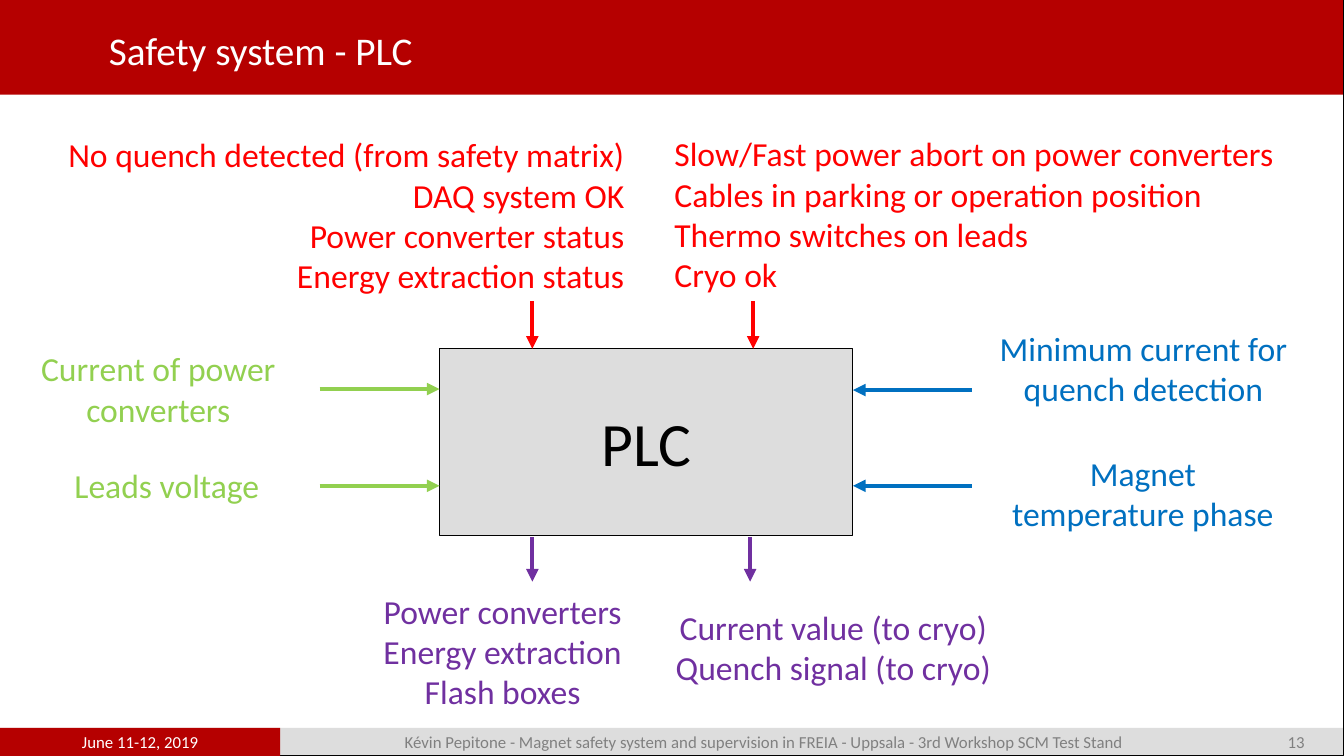
"""Build the PLC safety system slide."""
from lxml import etree
from pptx import Presentation
from pptx.dml.color import RGBColor
from pptx.enum.shapes import MSO_CONNECTOR, MSO_SHAPE
from pptx.enum.text import MSO_ANCHOR, MSO_AUTO_SIZE, PP_ALIGN
from pptx.oxml.ns import qn
from pptx.util import Pt

LEFT, CENTER, RIGHT = PP_ALIGN.LEFT, PP_ALIGN.CENTER, PP_ALIGN.RIGHT
TOP, MIDDLE, BOTTOM = MSO_ANCHOR.TOP, MSO_ANCHOR.MIDDLE, MSO_ANCHOR.BOTTOM
RECT, STRAIGHT = MSO_SHAPE.RECTANGLE, MSO_CONNECTOR.STRAIGHT
PX = 9144
W, H = 1333, 750
FONT = "Calibri"
COLORS = {
    "brand": "B50000", "panel": "DDDDDD", "black": "000000",
    "white": "FFFFFF", "grey": "808080", "red": "FF0000",
    "green": "92D050", "blue": "0070C0", "purple": "7030A0",
}

TITLE = "Safety system - PLC"
HEADER_H, FOOTER_H, DATE_W, NUMBER_W = 94, 28, 278, 95
FOOTER_Y = H - FOOTER_H
FOOTER = [
    ("June 11-12, 2019", 0, DATE_W, "white"),
    ("Kévin Pepitone - Magnet safety system and supervision in FREIA - "
     "Uppsala - 3rd Workshop SCM Test Stand",
     DATE_W, W - DATE_W - NUMBER_W, "grey"),
    ("13", W - NUMBER_W, NUMBER_W, "grey"),
]
BARS = [
    ((0, FOOTER_Y, W, FOOTER_H), "panel", None),
    ((0, 0, W, HEADER_H), "brand", None),
    ((0, 0, W, H), None, "black"),
    ((0, FOOTER_Y, DATE_W, FOOTER_H), "brand", None),
]
PLC = (436, 346, 410, 185)
SIGNALS = [
    (["No quench detected (from safety matrix)", "DAQ system OK",
      "Power converter status", "Energy extraction status"],
     (24, 126, 605, 172), "red", RIGHT, BOTTOM),
    (["Slow/Fast power abort on power converters",
      "Cables in parking or operation position",
      "Thermo switches on leads", "Cryo ok"],
     (659, 125, 630, 172), "red", LEFT, BOTTOM),
    (["Current of power converters"], (18, 340, 278, 91), "green", CENTER, MIDDLE),
    (["Leads voltage"], (63, 456, 205, 50), "green", CENTER, MIDDLE),
    (["Minimum current for quench detection"],
     (950, 320, 368, 91), "blue", CENTER, TOP),
    (["Magnet temperature phase"], (990, 444, 287, 91), "blue", CENTER, TOP),
    (["Power converters", "Energy extraction", "Flash boxes"],
     (338, 581, 321, 131), "purple", CENTER, TOP),
    (["Current value (to cryo)", "Quench signal (to cryo)"],
     (660, 597, 333, 91), "purple", CENTER, TOP),
]
RED_X, PURPLE_X = (528, 747), (528, 744)
GREEN_Y, BLUE_Y = (386, 482), (387, 482)


def emu(*lengths):
    return [round(n * PX) for n in lengths]


def rgb(name):
    return RGBColor.from_string(COLORS[name])


def write(tf, lines, size, color, align=CENTER, anchor=MIDDLE):
    tf.word_wrap = True
    tf.auto_size = MSO_AUTO_SIZE.NONE
    tf.vertical_anchor = anchor
    for i, line in enumerate(lines):
        p = tf.add_paragraph() if i else tf.paragraphs[0]
        p.text = line
        p.alignment = align
        p.font.name = FONT
        p.font.size = Pt(size)
        p.font.color.rgb = rgb(color)


def add_box(s, box, fill, line):
    sp = s.shapes.add_shape(RECT, *emu(*box))
    sp.shadow.inherit = False
    if fill:
        sp.fill.solid()
        sp.fill.fore_color.rgb = rgb(fill)
    else:
        sp.fill.background()
    if line:
        sp.line.color.rgb = rgb(line)
        sp.line.width = Pt(0.75)
    else:
        sp.line.fill.background()
    return sp


def add_label(s, lines, box, size, color, align=CENTER, anchor=MIDDLE):
    sp = s.shapes.add_textbox(*emu(*box))
    write(sp.text_frame, lines, size, color, align, anchor)


def add_arrow(s, x1, y1, x2, y2, color):
    c = s.shapes.add_connector(STRAIGHT, *emu(x1, y1, x2, y2))
    c.line.color.rgb = rgb(color)
    c.line.width = Pt(3)
    etree.SubElement(c.line._get_or_add_ln(), qn("a:tailEnd"), type="triangle")
    etree.SubElement(c._element.spPr, qn("a:effectLst"))


def main():
    prs = Presentation()
    prs.slide_width, prs.slide_height = emu(W, H)
    s = prs.slides.add_slide(prs.slide_layouts[5])

    for bar in BARS:
        add_box(s, *bar)

    title = s.shapes.title
    title.left, title.top, title.width, title.height = emu(98, 0, 1067, HEADER_H)
    write(title.text_frame, [TITLE], 28, "white", LEFT)
    title.text_frame.margin_bottom = 0
    tree = s.shapes._spTree
    tree.append(title._element)

    for text, x, w, color in FOOTER:
        add_label(s, [text], (x, FOOTER_Y, w, FOOTER_H), 12, color)

    plc = add_box(s, PLC, "panel", "black")
    write(plc.text_frame, ["PLC"], 44, "black")

    for lines, box, color, align, anchor in SIGNALS:
        add_label(s, lines, box, 24, color, align, anchor)

    x, y, w, h = PLC
    for ax in RED_X:
        add_arrow(s, ax, y - 47, ax, y, "red")
    for ax in PURPLE_X:
        add_arrow(s, ax, y + h + 2, ax, y + h + 46, "purple")
    for ay in GREEN_Y:
        add_arrow(s, x - 119, ay, x, ay, "green")
    for ay in BLUE_Y:
        add_arrow(s, x + w + 118, ay, x + w, ay, "blue")

    prs.save("out.pptx")


if __name__ == "__main__":
    main()
